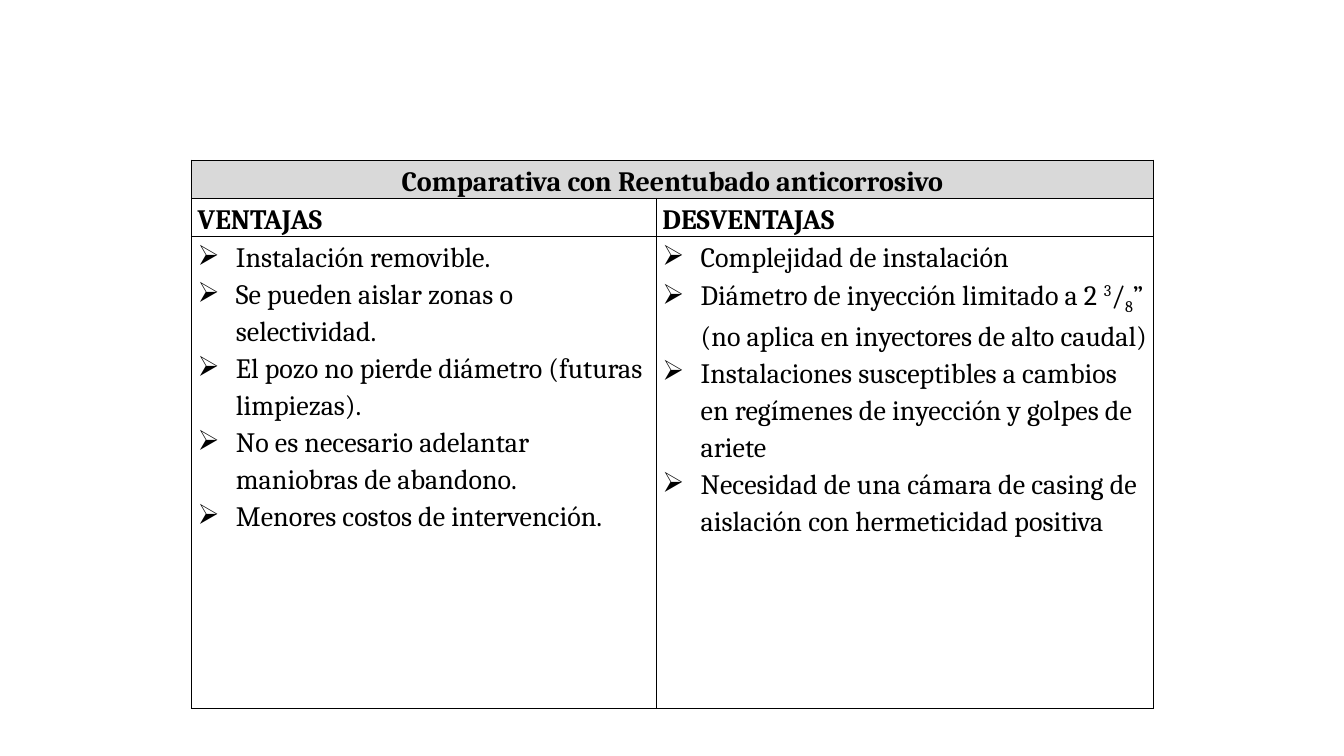
from dataclasses import dataclass

from lxml import etree
from pptx import Presentation
from pptx.dml.color import RGBColor
from pptx.enum.text import PP_ALIGN
from pptx.oxml.ns import qn
from pptx.util import Inches, Pt

CENTER, JUSTIFY, LEFT = PP_ALIGN.CENTER, PP_ALIGN.JUSTIFY, PP_ALIGN.LEFT


@dataclass(frozen=True)
class Theme:
    font: str = "Cambria"
    size: int = 20
    line_spacing: float = 1.15
    ink: str = "000000"
    heading_fill: str = "D9D9D9"
    border_width: int = 1
    bullet: str = "➢"
    indent: float = 0.38


THEME = Theme()
SUPERSCRIPT, SUBSCRIPT = 30000, -25000

TITLE = "Comparativa con Reentubado anticorrosivo"
# Each item is a list of (text, baseline shift) runs.
COMPARISON = {
    "VENTAJAS": [
        [("Instalación removible.", 0)],
        [("Se pueden aislar zonas o selectividad.", 0)],
        [("El pozo no pierde diámetro (futuras limpiezas).", 0)],
        [("No es necesario adelantar maniobras de abandono.", 0)],
        [("Menores costos de intervención.", 0)],
    ],
    "DESVENTAJAS": [
        [("Complejidad de instalación", 0)],
        [("Diámetro de inyección limitado a 2 ", 0), ("3", SUPERSCRIPT), ("/", 0),
         ("8", SUBSCRIPT), ("” (no aplica en inyectores de alto caudal)", 0)],
        [("Instalaciones susceptibles a cambios en regímenes de inyección "
          "y golpes de ariete", 0)],
        [("Necesidad de una cámara de casing de aislación con hermeticidad "
          "positiva", 0)],
    ],
}


def add_bullet(paragraph):
    properties = paragraph._p.get_or_add_pPr()
    properties.set("marL", str(Inches(THEME.indent)))
    properties.set("indent", str(-Inches(THEME.indent)))
    etree.SubElement(properties, qn("a:buChar"), char=THEME.bullet)


def write_paragraph(paragraph, runs, align, bold):
    paragraph.alignment = align
    paragraph.line_spacing = THEME.line_spacing
    for text, baseline in runs:
        run = paragraph.add_run()
        run.text = text
        run.font.name = THEME.font
        run.font.size = Pt(THEME.size)
        run.font.bold = bold
        run.font.color.rgb = RGBColor.from_string(THEME.ink)
        if baseline:
            run._r.get_or_add_rPr().set("baseline", str(baseline))


def write_heading(cell, text, align):
    write_paragraph(cell.text_frame.paragraphs[0], [(text, 0)], align, True)


def write_list(cell, items):
    frame = cell.text_frame
    for index, runs in enumerate(items):
        paragraph = frame.add_paragraph() if index else frame.paragraphs[0]
        add_bullet(paragraph)
        write_paragraph(paragraph, runs, LEFT, False)


def add_borders(cell):
    properties = cell._tc.get_or_add_tcPr()
    for position, side in enumerate(("lnL", "lnR", "lnT", "lnB")):
        line = etree.Element(qn(f"a:{side}"), w=str(Pt(THEME.border_width)))
        fill = etree.SubElement(line, qn("a:solidFill"))
        etree.SubElement(fill, qn("a:srgbClr"), val=THEME.ink)
        properties.insert(position, line)


def style_cell(cell, fill=None):
    cell.margin_left = cell.margin_right = Inches(0.06)
    cell.margin_top, cell.margin_bottom = Inches(0.01), 0
    if fill:
        cell.fill.solid()
        cell.fill.fore_color.rgb = RGBColor.from_string(fill)
    else:
        cell.fill.background()
    add_borders(cell)


def add_comparison_table(slide, left, top, width, height):
    heading_height, first_width = 0.34, 4.61
    table = slide.shapes.add_table(
        3, len(COMPARISON), Inches(left), Inches(top), Inches(width), Inches(height)
    ).table
    table.first_row = table.horz_banding = False
    for column, column_width in zip(table.columns, (first_width, width - first_width)):
        column.width = Inches(column_width)
    row_heights = (heading_height, heading_height, height - 2 * heading_height)
    for index, (row, row_height) in enumerate(zip(table.rows, row_heights)):
        row.height = Inches(row_height)
        for cell in row.cells:
            style_cell(cell, THEME.heading_fill if index == 0 else None)

    title_cell = table.cell(0, 0)
    title_cell.merge(table.cell(0, 1))
    write_heading(title_cell, TITLE, CENTER)
    for column, (heading, items) in enumerate(COMPARISON.items()):
        write_heading(table.cell(1, column), heading, JUSTIFY)
        write_list(table.cell(2, column), items)


def main():
    deck = Presentation()
    deck.slide_width, deck.slide_height = Inches(13.33), Inches(7.5)
    slide = deck.slides.add_slide(deck.slide_layouts[6])
    add_comparison_table(slide, 1.9, 1.59, 9.54, 5.36)
    deck.save("out.pptx")


if __name__ == "__main__":
    main()
